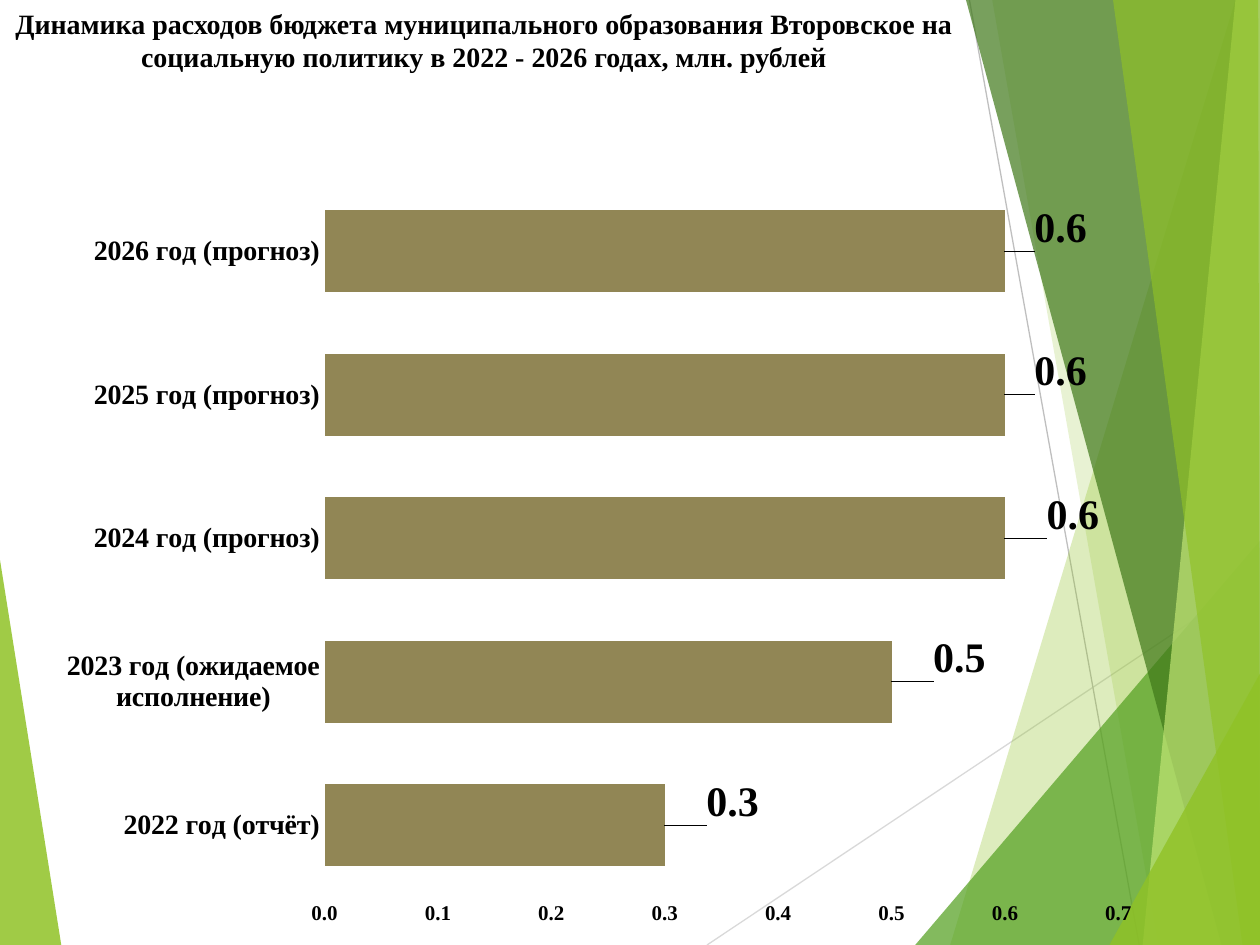
from lxml import etree
from pptx import Presentation
from pptx.chart.data import CategoryChartData
from pptx.dml.color import RGBColor
from pptx.enum import chart as charts, shapes, text
from pptx.oxml import ns
from pptx.util import Pt

COLORS = {
    "lime": "90C226", "green": "54A021", "dark green": "3F7819", "pale lime": "C0E474",
    "light gray": "D9D9D9", "gray": "BFBFBF", "black": "000000", "bar": "918655",
}
WIDTH, HEIGHT = 720, 540
SERIF = "Times New Roman"

# Each facet: colour, opacity in percent, corners in points
LEFT_FACET = ("lime", 85, [(0, 320), (35, HEIGHT), (0, HEIGHT)])
RIGHT_FACETS = [
    ("lime", 30, [(706, 0), (543, HEIGHT), (WIDTH, HEIGHT), (WIDTH, 0)]),
    ("lime", 20, [(567, 0), (662, HEIGHT), (WIDTH, HEIGHT), (WIDTH, 0)]),
    ("green", 72, [(523, HEIGHT), (WIDTH, 309), (WIDTH, HEIGHT)]),
    ("dark green", 70, [(552, 0), (698, HEIGHT), (WIDTH, HEIGHT), (WIDTH, 0)]),
    ("pale lime", 70, [(706, 0), (653, HEIGHT), (WIDTH, HEIGHT), (WIDTH, 0)]),
    ("lime", 65, [(636, 0), (710, HEIGHT), (WIDTH, HEIGHT), (719, 0)]),
    ("lime", 80, [(634, HEIGHT), (WIDTH, 385), (WIDTH, HEIGHT)]),
]
RAYS = [("light gray", (404, HEIGHT), (WIDTH, 329)), ("gray", (554, 0), (651, HEIGHT))]

TITLE = ("Динамика расходов бюджета муниципального образования Второвское на "
         "социальную политику в 2022 - 2026 годах, млн. рублей")
# Each bar: category, value, label shift as a share of the chart's size
SPENDING = [
    ("2022 год (отчёт)", 0.3, (0.03, -0.03)),
    ("2023 год (ожидаемое исполнение)", 0.5, (0.03, -0.03)),
    ("2024 год (прогноз)", 0.6, (0.03, -0.03)),
    ("2025 год (прогноз)", 0.6, (0.02, -0.03)),
    ("2026 год (прогноз)", 0.6, (0.02, -0.03)),
]


def color(name):
    return RGBColor.from_string(COLORS[name])


def set_font(font, size):
    font.name = SERIF
    font.size = Pt(size)
    font.bold = True
    font.color.rgb = color("black")


def add_facet(slide, fill, opacity, corners):
    start, *others = [(Pt(x), Pt(y)) for x, y in corners]
    builder = slide.shapes.build_freeform(*start)
    builder.add_line_segments(others, close=True)
    shape = builder.convert_to_shape()
    shape.shadow.inherit = False
    shape.fill.solid()
    shape.fill.fore_color.rgb = color(fill)
    shape.line.fill.background()
    fill_color = shape.fill._xPr.find(".//" + ns.qn("a:srgbClr"))
    etree.SubElement(fill_color, ns.qn("a:alpha"), val=str(opacity * 1000))


def add_ray(slide, line_color, start, end):
    connector = slide.shapes.add_connector(
        shapes.MSO_CONNECTOR.STRAIGHT, *[Pt(value) for value in (*start, *end)])
    connector.line.color.rgb = color(line_color)
    connector.line.width = Pt(0.75)
    etree.SubElement(connector._element.spPr, ns.qn("a:effectLst"))


def add_title(slide):
    box = slide.shapes.add_textbox(Pt(0), Pt(0), Pt(553), Pt(78.5))
    frame = box.text_frame
    frame.word_wrap = True
    frame.vertical_anchor = text.MSO_ANCHOR.TOP
    paragraph = frame.paragraphs[0]
    paragraph.text = TITLE
    paragraph.alignment = text.PP_ALIGN.CENTER
    set_font(paragraph.font, 16)


def make_layout(**settings):
    """Return a c:layout element holding a manual layout."""
    layout = etree.Element(ns.qn("c:layout"))
    manual = etree.SubElement(layout, ns.qn("c:manualLayout"))
    for name, value in settings.items():
        etree.SubElement(manual, ns.qn("c:" + name), val=str(value))
    return layout


def place_plot(chart):
    plot_area = chart._chartSpace.find(".//" + ns.qn("c:plotArea"))
    for layout in plot_area.findall(ns.qn("c:layout")):
        plot_area.remove(layout)
    plot_area.insert(0, make_layout(
        layoutTarget="inner", xMode="edge", yMode="edge", x=0.265, y=0.025, w=0.648, h=0.914))


def style_axis(axis, size):
    axis.has_major_gridlines = False
    axis.major_tick_mark = charts.XL_TICK_MARK.NONE
    axis.minor_tick_mark = charts.XL_TICK_MARK.NONE
    axis.format.line.fill.background()
    set_font(axis.tick_labels.font, size)


def style_labels(plot, series):
    plot.has_data_labels = True
    labels = plot.data_labels
    labels.show_value = True
    labels.number_format = "0.0"
    labels.number_format_is_linked = False
    set_font(labels.font, 24)
    for index, (_, _, (shift_x, shift_y)) in enumerate(SPENDING):
        label = series.points[index].data_label
        set_font(label.font, 24)
        label.position = charts.XL_LABEL_POSITION.OUTSIDE_END
        index_element = label._dLbl.find(ns.qn("c:idx"))
        index_element.addnext(make_layout(x=shift_x, y=shift_y))


def add_spending_chart(slide):
    data = CategoryChartData(number_format="0.0")
    data.categories = [category for category, _, _ in SPENDING]
    data.add_series("Series 1", [value for _, value, _ in SPENDING])
    chart = slide.shapes.add_chart(
        charts.XL_CHART_TYPE.BAR_CLUSTERED, Pt(0), Pt(91.5), Pt(700), Pt(448.5), data).chart
    chart.has_legend = False
    chart.has_title = False
    chart.font.name = "Roboto"
    chart.font.size = Pt(10)
    chart.font.color.rgb = color("black")
    place_plot(chart)

    style_axis(chart.category_axis, 16)
    value_axis = chart.value_axis
    style_axis(value_axis, 12)
    value_axis.minimum_scale, value_axis.maximum_scale = 0, 0.7
    value_axis.major_unit = 0.1
    value_axis.tick_labels.number_format = "0.0"
    value_axis.tick_labels.number_format_is_linked = False

    plot = chart.plots[0]
    plot.gap_width = 75
    plot.vary_by_categories = False
    series = plot.series[0]
    series.format.fill.solid()
    series.format.fill.fore_color.rgb = color("bar")
    style_labels(plot, series)


def main():
    presentation = Presentation()
    presentation.slide_width, presentation.slide_height = Pt(WIDTH), Pt(HEIGHT)
    slide = presentation.slides.add_slide(presentation.slide_layouts[6])
    add_facet(slide, *LEFT_FACET)
    for ray in RAYS:
        add_ray(slide, *ray)
    for facet in RIGHT_FACETS:
        add_facet(slide, *facet)
    add_title(slide)
    add_spending_chart(slide)
    presentation.save("out.pptx")


if __name__ == "__main__":
    main()
